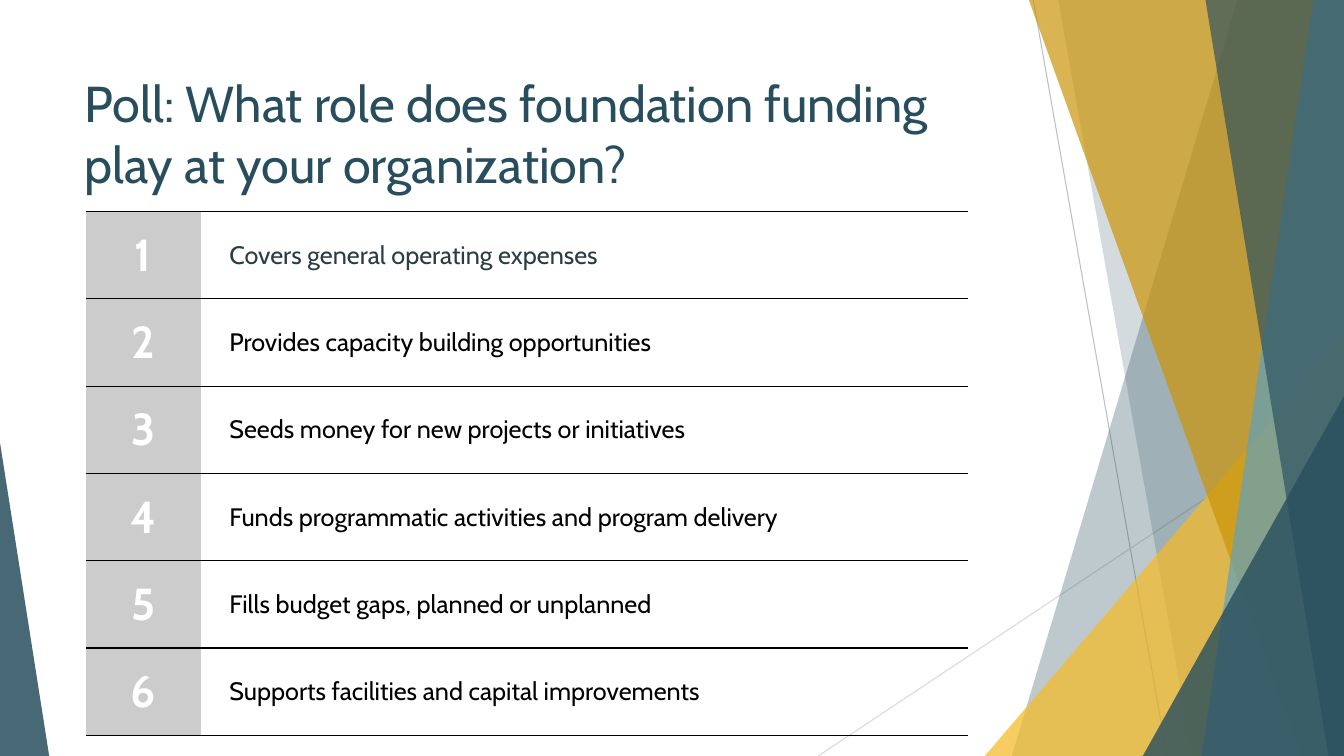
"""Build a poll slide with six numbered answers beside a faceted ribbon design."""
from lxml import etree
from pptx import Presentation
from pptx.dml.color import RGBColor
from pptx.enum.shapes import MSO_CONNECTOR, MSO_SHAPE
from pptx.enum.text import MSO_ANCHOR, MSO_AUTO_SIZE, PP_ALIGN
from pptx.oxml.ns import qn
from pptx.util import Cm, Pt

STRAIGHT = MSO_CONNECTOR.STRAIGHT
TRIANGLE = MSO_SHAPE.ISOSCELES_TRIANGLE
TOP, MIDDLE = MSO_ANCHOR.TOP, MSO_ANCHOR.MIDDLE
LEFT, CENTER = PP_ALIGN.LEFT, PP_ALIGN.CENTER
NO_AUTOFIT = MSO_AUTO_SIZE.NONE

FONT = "Cabin"
TEAL, GOLD, OCHRE, SKY = "284E5E", "F5BA26", "CB9409", "61A1BC"
BLACK, WHITE, GRAY, SLATE = "000000", "FFFFFF", "CCCCCC", "2C3C43"
WIDTH, HEIGHT = 33.87, 19.05


def paint(fill, color):
    fill.solid()
    fill.fore_color.rgb = RGBColor.from_string(color)


def write(text_frame, text, *, size, color, bold=False, align=LEFT):
    paragraph = text_frame.paragraphs[0]
    paragraph.alignment = align
    run = paragraph.add_run()
    run.text = text
    run.font.name = FONT
    run.font.size = Pt(size)
    run.font.bold = bold
    paint(run.font.fill, color)


presentation = Presentation()
presentation.slide_width = Cm(WIDTH)
presentation.slide_height = Cm(HEIGHT)
slide = presentation.slides.add_slide(presentation.slide_layouts[5])

hairlines = [
    (26.04, 0, 29.41, HEIGHT, "BFBFBF"),
    (WIDTH, 10.24, 20.62, HEIGHT, "D9D9D9"),
]
for start_x, start_y, end_x, end_y, color in hairlines:
    connector = slide.shapes.add_connector(
        STRAIGHT, Cm(start_x), Cm(start_y), Cm(end_x), Cm(end_y))
    paint(connector.line.fill, color)
    connector.line.width = Pt(0.75)
    etree.SubElement(connector._element.spPr, qn("a:effectLst"))

# Bands give top x and bottom x; triangles give left, top, width and apex.
facets = [
    ("band", (31.19, 25.5), TEAL, 30),
    ("band", (26.67, 30.05), TEAL, 20),
    ("triangle", (24.82, 8.46, 9.05, 1), GOLD, 72),
    ("band", (25.93, 32.79), OCHRE, 70),
    ("band", (33.1, 30.28), SKY, 70),
    ("band", (30.38, 33.48), TEAL, 65),
    ("triangle", (28.8, 9.98, 5.07, 1), TEAL, 80),
    ("triangle", (0, 11.15, 1.24, 0), TEAL, 85),
]
for kind, geometry, color, opacity in facets:
    if kind == "band":
        top_x, bottom_x = geometry
        builder = slide.shapes.build_freeform(Cm(top_x), 0)
        builder.add_line_segments([
            (Cm(WIDTH), 0), (Cm(WIDTH), Cm(HEIGHT)), (Cm(bottom_x), Cm(HEIGHT))])
        shape = builder.convert_to_shape()
    else:
        left, top, width, apex = geometry
        shape = slide.shapes.add_shape(
            TRIANGLE, Cm(left), Cm(top), Cm(width), Cm(HEIGHT - top))
        shape.adjustments[0] = apex
    shape.shadow.inherit = False
    shape.line.fill.background()
    paint(shape.fill, color)
    color_element = shape._element.spPr.find(".//" + qn("a:srgbClr"))
    etree.SubElement(color_element, qn("a:alpha"), val=str(opacity * 1000))

title = slide.shapes.title
title.left, title.top, title.width, title.height = Cm(1.88), Cm(1.7), Cm(23.88), Cm(3.66)
title.text_frame.word_wrap = True
title.text_frame.auto_size = NO_AUTOFIT
title.text_frame.vertical_anchor = TOP
write(title.text_frame, "Poll: What role does foundation funding play at your organization?",
      size=36, color=TEAL)

answers = [
    "Covers general operating expenses",
    "Provides capacity building opportunities",
    "Seeds money for new projects or initiatives",
    "Funds programmatic activities and program delivery",
    "Fills budget gaps, planned or unplanned",
    "Supports facilities and capital improvements",
]
number_width, answer_width, row_height = 2.9, 19.33, 2.2
table = slide.shapes.add_table(
    len(answers), 2, Cm(2.16), Cm(5.33),
    Cm(number_width + answer_width), Cm(row_height * len(answers))).table
table.first_row = False
table.horz_banding = False
table.columns[0].width = Cm(number_width)
table.columns[1].width = Cm(answer_width)

for index, answer in enumerate(answers):
    table.rows[index].height = Cm(row_height)
    number_cell, answer_cell = table.cell(index, 0), table.cell(index, 1)
    for cell in (number_cell, answer_cell):
        cell.vertical_anchor = MIDDLE
        cell.margin_left = cell.margin_right = Cm(0.36)
        cell.margin_top = cell.margin_bottom = Cm(0.13)
        properties = cell._tc.get_or_add_tcPr()
        for side in ("lnL", "lnR"):
            border = etree.SubElement(properties, qn("a:" + side))
            etree.SubElement(border, qn("a:noFill"))
        for side in ("lnT", "lnB"):
            border = etree.SubElement(properties, qn("a:" + side), w=str(Pt(1)))
            border_fill = etree.SubElement(border, qn("a:solidFill"))
            etree.SubElement(border_fill, qn("a:srgbClr"), val=BLACK)
    answer_cell.margin_left = Cm(0.72)
    paint(number_cell.fill, GRAY)
    answer_cell.fill.background()
    write(number_cell.text_frame, str(index + 1), size=32, color=WHITE, bold=True, align=CENTER)
    write(answer_cell.text_frame, answer, size=18, color=SLATE if index == 0 else BLACK)

presentation.save("out.pptx")
